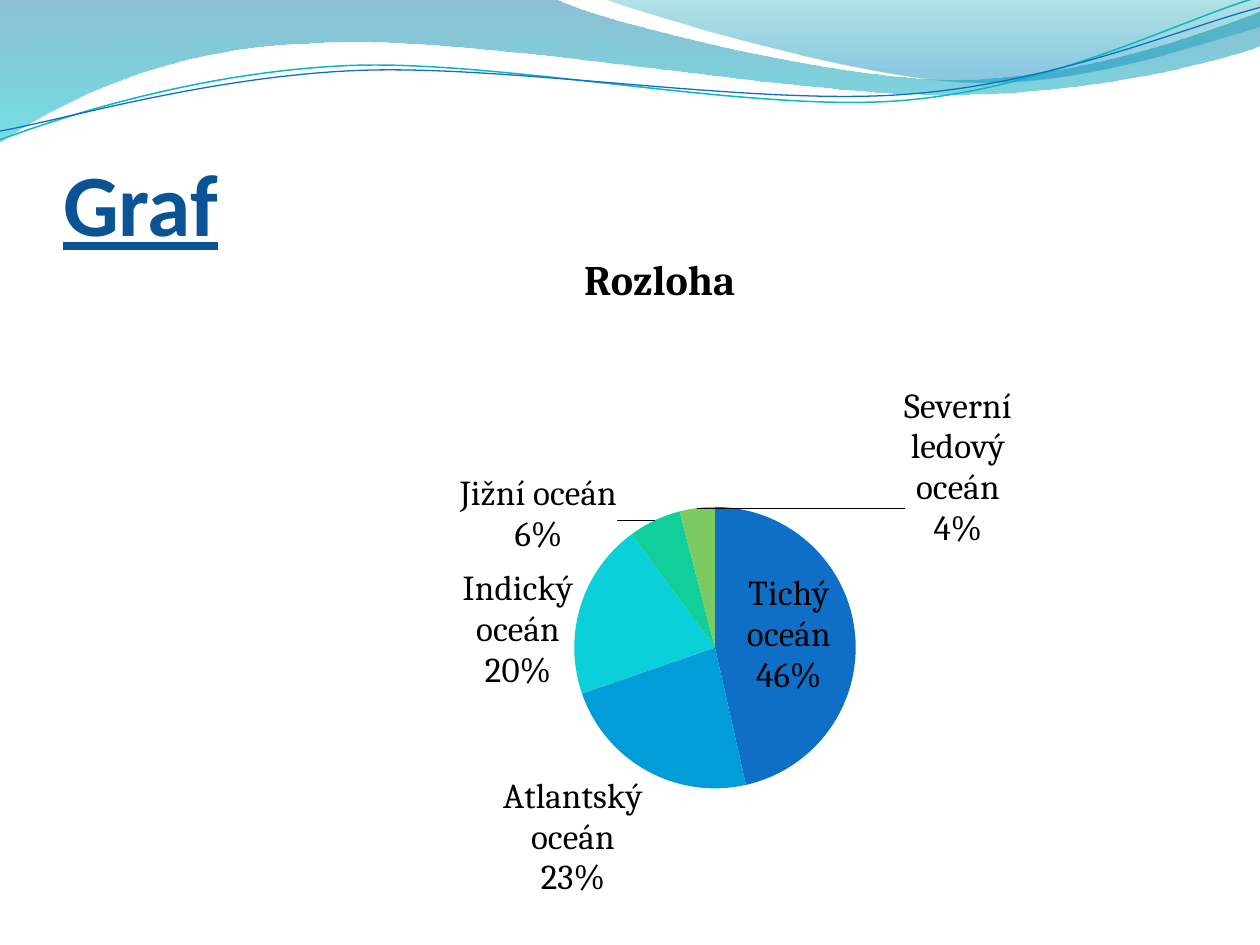
from copy import deepcopy
from math import cos, radians, sin

from lxml import etree
from pptx import Presentation
from pptx.chart.data import CategoryChartData
from pptx.dml.color import RGBColor
from pptx.enum.chart import XL_CHART_TYPE as ChartType, XL_LABEL_POSITION as LabelPosition
from pptx.enum.text import MSO_ANCHOR as Anchor, PP_ALIGN as Align
from pptx.oxml import parse_xml
from pptx.oxml.ns import nsdecls, qn
from pptx.util import Inches, Pt

BLACK = RGBColor(0x00, 0x00, 0x00)
TITLE_BLUE = RGBColor(0x0B, 0x53, 0x94)
DEEP_BLUE = RGBColor(0x00, 0x74, 0xA1)
CYAN = RGBColor(0x00, 0xC6, 0xCF)
TEAL = RGBColor(0x00, 0xA1, 0xA9)
SKY_BLUE = RGBColor(0x00, 0x8B, 0xBF)
LINE_TEAL = RGBColor(0x0A, 0xB8, 0xBF)
LINE_BLUE = RGBColor(0x0F, 0x6F, 0xC6)
SLICE_COLORS = [
    LINE_BLUE,
    RGBColor(0x00, 0x9D, 0xD9),
    RGBColor(0x0B, 0xD0, 0xD9),
    RGBColor(0x10, 0xCF, 0x9B),
    RGBColor(0x7C, 0xCA, 0x62),
]
OCEANS = {
    "Tichý oceán": 46,
    "Atlantský oceán": 23,
    "Indický oceán": 20,
    "Jižní oceán": 6,
    "Severní ledový oceán": 4,
}
LABEL_OFFSETS = {3: (-0.04, 0.06), 4: (0.37, 0.07)}
PIE_AREA = {"x": 0.4, "y": 0.4, "w": 0.33, "h": 0.42}
LINE_TILT = 2.7

LEFT_WAVE = [
    (0, 0), (4.4, -0.01),
    (4.76, 0.17, 6.64, 0.63, 7.58, 0.63), (8.53, 0.63, 9.58, 0.26, 10, 0.09),
    (10.01, 0.36),
    (9.83, 0.44, 8.7, 0.76, 7.46, 0.75), (6.22, 0.75, 3.82, 0.28, 2.57, 0.34),
    (1.29, 0.36, 0.46, 0.83, -0.01, 1.13), (0, 0),
]
RIGHT_WAVE = [
    (4.79, -0.01),
    (5.09, 0.11, 6.82, 0.62, 7.69, 0.65), (8.56, 0.69, 9.61, 0.32, 10, 0.21),
    (10, 0), (4.79, -0.01),
]
TEAL_LINE = [
    (0, 1.11),
    (0.48, 0.93, 1.58, 0.57, 2.77, 0.52), (3.95, 0.47, 5.93, 0.89, 7.13, 0.8),
    (8.33, 0.71, 9.38, 0.15, 9.98, -0.02),
]
BLUE_LINE = [
    (0, 1.04),
    (0.47, 0.96, 1.64, 0.61, 2.83, 0.56), (4.03, 0.51, 5.97, 0.84, 7.17, 0.75),
    (8.36, 0.67, 9.41, 0.21, 10, 0.06),
]


def apply_format(target, values):
    for name, value in values.items():
        setattr(target, name, value)


def turn(points, center, degrees):
    angle = radians(degrees)
    center_x, center_y = center
    return [
        (center_x + (x - center_x) * cos(angle) - (y - center_y) * sin(angle),
         center_y + (x - center_x) * sin(angle) + (y - center_y) * cos(angle))
        for x, y in points
    ]


def add_outline(slide, segments, close, center=(0, 0), tilt=0):
    points = [
        segment[start:start + 2]
        for segment in segments for start in range(0, len(segment), 2)
    ]
    corners = [(Inches(x), Inches(y)) for x, y in turn(points, center, tilt)]
    builder = slide.shapes.build_freeform(*corners[0])
    builder.add_line_segments(corners[1:], close=close)
    shape = builder.convert_to_shape()
    shape.shadow.inherit = False
    lines = iter(list(shape.element.iter(qn("a:lnTo"))))
    for segment in segments[1:]:
        line = next(lines)
        if len(segment) == 6:
            curve = etree.Element(qn("a:cubicBezTo"))
            line.addprevious(curve)
            for part in (line, next(lines), next(lines)):
                curve.append(part[0])
                part.getparent().remove(part)
    return shape


def add_wave(slide, segments, stops):
    shape = add_outline(slide, segments, True)
    shape.line.fill.background()
    shape.fill.gradient()
    shape.fill.gradient_angle = 270
    for stop, (position, color, opacity) in zip(shape.fill.gradient_stops, stops):
        stop.position = position
        stop.color.rgb = color
    gradient_colors = shape.element.spPr.iter(qn("a:srgbClr"))
    for element, (_, _, opacity) in zip(gradient_colors, stops):
        etree.SubElement(element, qn("a:alpha"), val=str(opacity * 1000))


def add_wave_line(slide, segments, center, color, width):
    shape = add_outline(slide, segments, False, center, LINE_TILT)
    shape.rotation = 360 - LINE_TILT
    shape.fill.background()
    shape.line.color.rgb = color
    shape.line.width = Pt(width)


def place_title(slide, text):
    title = slide.shapes.title
    apply_format(title, {
        "left": Inches(0.5), "top": Inches(0.77),
        "width": Inches(9.08), "height": Inches(1.25),
    })
    frame = title.text_frame
    frame.text = text
    apply_format(frame, {
        "vertical_anchor": Anchor.BOTTOM, "word_wrap": True,
        "margin_left": 0, "margin_right": 0,
        "margin_top": Inches(0.05), "margin_bottom": 0,
    })
    paragraph = frame.paragraphs[0]
    paragraph.alignment = Align.LEFT
    font = paragraph.runs[0].font
    apply_format(font, {"name": "Calibri", "size": Pt(50), "bold": True, "underline": True})
    font.color.rgb = TITLE_BLUE
    title.element.getparent().append(title.element)


def make_layout(values, inner=False):
    target = '<c:layoutTarget val="inner"/><c:xMode val="edge"/><c:yMode val="edge"/>' if inner else ""
    numbers = "".join(f'<c:{name} val="{value}"/>' for name, value in values.items())
    return parse_xml(
        f'<c:layout {nsdecls("c")}><c:manualLayout>{target}{numbers}</c:manualLayout></c:layout>'
    )


def format_labels(series):
    labels = series.data_labels
    apply_format(labels, {
        "show_category_name": True, "show_percentage": True, "show_value": False,
        "position": LabelPosition.BEST_FIT,
    })
    apply_format(labels.font, {"name": "Cambria", "size": Pt(20)})
    labels.font.color.rgb = BLACK
    element = labels._element
    separator = etree.Element(qn("c:separator"))
    separator.text = "\n"
    element.find(qn("c:showBubbleSize")).addnext(separator)
    shared = [deepcopy(child) for child in element if child.tag != qn("c:showLeaderLines")]
    for position, (index, (x, y)) in enumerate(LABEL_OFFSETS.items()):
        label = parse_xml(f'<c:dLbl {nsdecls("c")}><c:idx val="{index}"/></c:dLbl>')
        label.append(make_layout({"x": x, "y": y}))
        label.extend(deepcopy(shared))
        element.insert(position, label)


def add_pie(slide):
    data = CategoryChartData()
    data.categories = list(OCEANS)
    data.add_series("Series 1", OCEANS.values())
    chart = slide.shapes.add_chart(
        ChartType.PIE, Inches(1.85), Inches(1.78), Inches(6.77), Inches(5.51), data
    ).chart
    chart.has_legend = False
    apply_format(chart.font, {"name": "Cambria", "size": Pt(18)})
    chart.font.color.rgb = BLACK
    chart.has_title = True
    chart.chart_title.include_in_layout = False
    chart.chart_title.text_frame.text = "Rozloha"
    font = chart.chart_title.text_frame.paragraphs[0].runs[0].font
    apply_format(font, {"name": "Cambria", "size": Pt(24), "bold": True})
    font.color.rgb = BLACK
    series = chart.plots[0].series[0]
    for index, color in enumerate(SLICE_COLORS):
        fill = series.points[index].format.fill
        fill.solid()
        fill.fore_color.rgb = color
    format_labels(series)
    plot_area = chart._chartSpace.chart.plotArea
    for old_layout in plot_area.findall(qn("c:layout")):
        plot_area.remove(old_layout)
    plot_area.insert(0, make_layout(PIE_AREA, inner=True))


def main():
    presentation = Presentation()
    presentation.slide_width = Inches(10)
    presentation.slide_height = Inches(7.5)
    slide = presentation.slides.add_slide(presentation.slide_layouts[5])
    add_wave(slide, LEFT_WAVE, [(0, DEEP_BLUE, 45), (1, CYAN, 55)])
    add_wave(slide, RIGHT_WAVE, [(0, TEAL, 30), (0.8, SKY_BLUE, 45)])
    add_wave_line(slide, TEAL_LINE, (4.99, 0.58), LINE_TEAL, 0.85)
    add_wave_line(slide, BLUE_LINE, (5, 0.59), LINE_BLUE, 0.75)
    place_title(slide, "Graf")
    add_pie(slide)
    presentation.save("out.pptx")


if __name__ == "__main__":
    main()
